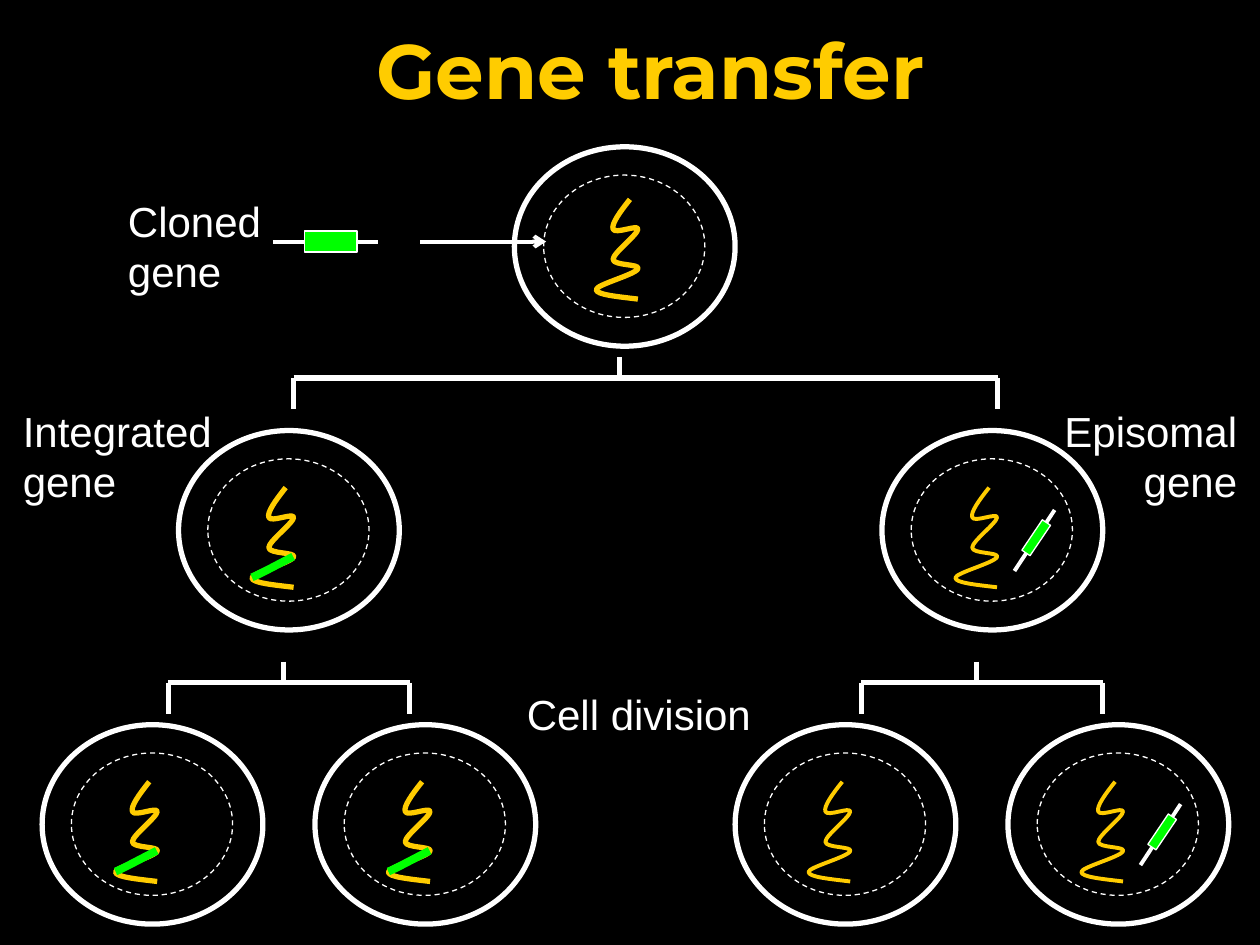
from dataclasses import dataclass

from lxml import etree
from pptx import Presentation, util as u
from pptx.dml.color import RGBColor
from pptx.enum import dml, shapes, text
from pptx.oxml.ns import qn


@dataclass(frozen=True)
class Theme:
    back: RGBColor = RGBColor(0x00, 0x00, 0x00)
    ink: RGBColor = RGBColor(0xFF, 0xFF, 0xFF)
    gold: RGBColor = RGBColor(0xFF, 0xCC, 0x00)
    gene: RGBColor = RGBColor(0x00, 0xFF, 0x00)
    title_font: str = "Montserrat"
    body_font: str = "Arial"
    title_size: float = 44
    body_size: float = 24
    hairline: float = 0.75
    medium: float = 2.25
    thick: float = 3
    insert: float = 4.5


# Lengths are centimetres; cell parts are measured from the cell's corner.
CELL = (4.45, 4.02)
NUCLEUS = (0.59, 0.57, 3.25, 2.87)
# Curves: a start, then two controls and an end for each cubic.
STRAND = [
    (0.68, 0), (0.48, 0.25), (0.3, 0.5), (0.34, 0.6),
    (0.38, 0.71), (0.84, 0.5), (0.84, 0.6),
    (0.84, 0.71), (0.34, 1.08), (0.34, 1.21),
    (0.34, 1.34), (0.9, 1.3), (0.84, 1.4),
    (0.78, 1.52), (0, 1.72), (0, 1.82),
    (0, 1.92), (0.42, 1.96), (0.84, 2.01),
]
INSERT = [(2.31, 2.54), (1.96, 2.72), (1.63, 2.9), (1.48, 2.96)]


class Diagram:
    def __init__(self, prs, theme):
        self.theme = theme
        self.s = prs.slides.add_slide(prs.slide_layouts[5])
        fill = self.s.background.fill
        fill.solid()
        fill.fore_color.rgb = theme.back

    def style(self, sp, color, width, fill=None):
        sp.shadow.inherit = False
        sp.line.color.rgb = color
        sp.line.width = u.Pt(width)
        if fill is None:
            sp.fill.background()
        else:
            sp.fill.solid()
            sp.fill.fore_color.rgb = fill

    def title(self, words, x, y, w, h):
        sp = self.s.shapes.title
        sp.left, sp.top, sp.width, sp.height = map(u.Cm, (x, y, w, h))
        tf = sp.text_frame
        tf.text = words
        tf.vertical_anchor = text.MSO_ANCHOR.MIDDLE
        p = tf.paragraphs[0]
        p.alignment = text.PP_ALIGN.CENTER
        p.font.bold = True
        self.font(p, self.theme.title_font, self.theme.title_size, self.theme.gold)

    def font(self, p, name, size, color):
        p.font.name = name
        p.font.size = u.Pt(size)
        p.font.color.rgb = color

    def label(self, words, x, y, w, h, align=text.PP_ALIGN.LEFT):
        tf = self.s.shapes.add_textbox(*map(u.Cm, (x, y, w, h))).text_frame
        tf.word_wrap = True
        tf.text = words
        p = tf.paragraphs[0]
        p.alignment = align
        self.font(p, self.theme.body_font, self.theme.body_size, self.theme.ink)

    def line(self, x1, y1, x2, y2, width, arrow=False):
        sp = self.s.shapes.add_connector(
            shapes.MSO_CONNECTOR.STRAIGHT, *map(u.Cm, (x1, y1, x2, y2)))
        sp.line.color.rgb = self.theme.ink
        sp.line.width = u.Pt(width)
        if arrow:
            etree.SubElement(sp.line._get_or_add_ln(), qn("a:tailEnd"), type="arrow")
        etree.SubElement(sp._element.spPr, qn("a:effectLst"))

    def oval(self, x, y, w, h, width, dashed=False):
        sp = self.s.shapes.add_shape(shapes.MSO_SHAPE.OVAL, *map(u.Cm, (x, y, w, h)))
        self.style(sp, self.theme.ink, width)
        if dashed:
            sp.line.dash_style = dml.MSO_LINE.DASH

    def gene_box(self, x, y, w, h, rotation=0):
        sp = self.s.shapes.add_shape(shapes.MSO_SHAPE.RECTANGLE, *map(u.Cm, (x, y, w, h)))
        self.style(sp, self.theme.ink, self.theme.hairline, self.theme.gene)
        sp.rotation = rotation

    def curve(self, nodes, x, y, color, width, fill=None):
        """Build a freeform, then join every three segments into one cubic."""
        points = [(u.Cm(x + px), u.Cm(y + py)) for px, py in nodes]
        builder = self.s.shapes.build_freeform(*points[0])
        builder.add_line_segments(points[1:], close=False)
        sp = builder.convert_to_shape()
        segments = list(sp._element.iter(qn("a:lnTo")))
        for i in range(0, len(segments), 3):
            cubic = etree.Element(qn("a:cubicBezTo"))
            segments[i].addprevious(cubic)
            for segment in segments[i:i + 3]:
                cubic.append(segment[0])
                segment.getparent().remove(segment)
        self.style(sp, color, width, fill)

    def cell(self, x, y, strand_at=(1.48, 1.15), strand_width=None,
             integrated=False, episome=False):
        t = self.theme
        nx, ny, nw, nh = NUCLEUS
        self.oval(x, y, *CELL, t.thick)
        self.oval(x + nx, y + ny, nw, nh, t.hairline, dashed=True)
        self.curve(STRAND, x + strand_at[0], y + strand_at[1], t.gold,
                   strand_width or t.thick)
        if integrated:
            self.curve(INSERT, x, y, t.gene, t.insert, t.gene)
        if episome:
            self.line(x + 2.67, y + 2.83, x + 3.48, y + 1.6, t.medium)
            self.gene_box(x + 2.74, y + 2.06, 0.74, 0.2, rotation=304)

    def bracket(self, stem, y, left, right):
        """A bar with a short stem above it and a drop at each end."""
        for ends in ((stem, y - 0.42, stem, y), (left, y, right, y),
                     (left, y, left, y + 0.63), (right, y, right, y + 0.63)):
            self.line(*ends, self.theme.thick)


def main():
    prs = Presentation()
    prs.slide_width, prs.slide_height = u.Cm(25.4), u.Cm(19.05)
    theme = Theme()
    d = Diagram(prs, theme)
    d.title("Gene transfer", 1.69, -0.2, 22.86, 3.18)

    # Transfer into the host cell
    d.cell(10.37, 2.96, strand_at=(1.65, 1.06))
    d.line(5.5, 4.87, 7.62, 4.87, theme.medium)
    d.gene_box(6.14, 4.66, 1.06, 0.42)
    d.line(8.47, 4.87, 11.01, 4.87, theme.medium, arrow=True)
    d.label("Cloned gene", 2.33, 3.81, 5.08, 2.28)

    # Integrated and episomal outcomes
    middle, bottom = 8.68, 14.61
    d.bracket(12.49, 7.62, 5.92, 20.11)
    d.cell(3.6, middle, integrated=True)
    d.cell(17.78, middle, strand_width=theme.medium, episome=True)
    d.label("Integrated gene", 0.21, 8.04, 4.45, 2.28)
    d.label("Episomal gene", 20.11, 8.04, 5.08, 2.28, text.PP_ALIGN.RIGHT)

    # Daughter cells
    for stem, left, right in ((5.72, 3.39, 8.26), (19.69, 17.36, 22.23)):
        d.bracket(stem, 13.76, left, right)
    for x in (0.85, 6.35):
        d.cell(x, bottom, integrated=True)
    for x, episome in ((14.82, False), (20.32, True)):
        d.cell(x, bottom, strand_width=theme.medium, episome=episome)
    d.label("Cell division", 10.37, 13.76, 5.08, 1.28)

    prs.save("out.pptx")


if __name__ == "__main__":
    main()
